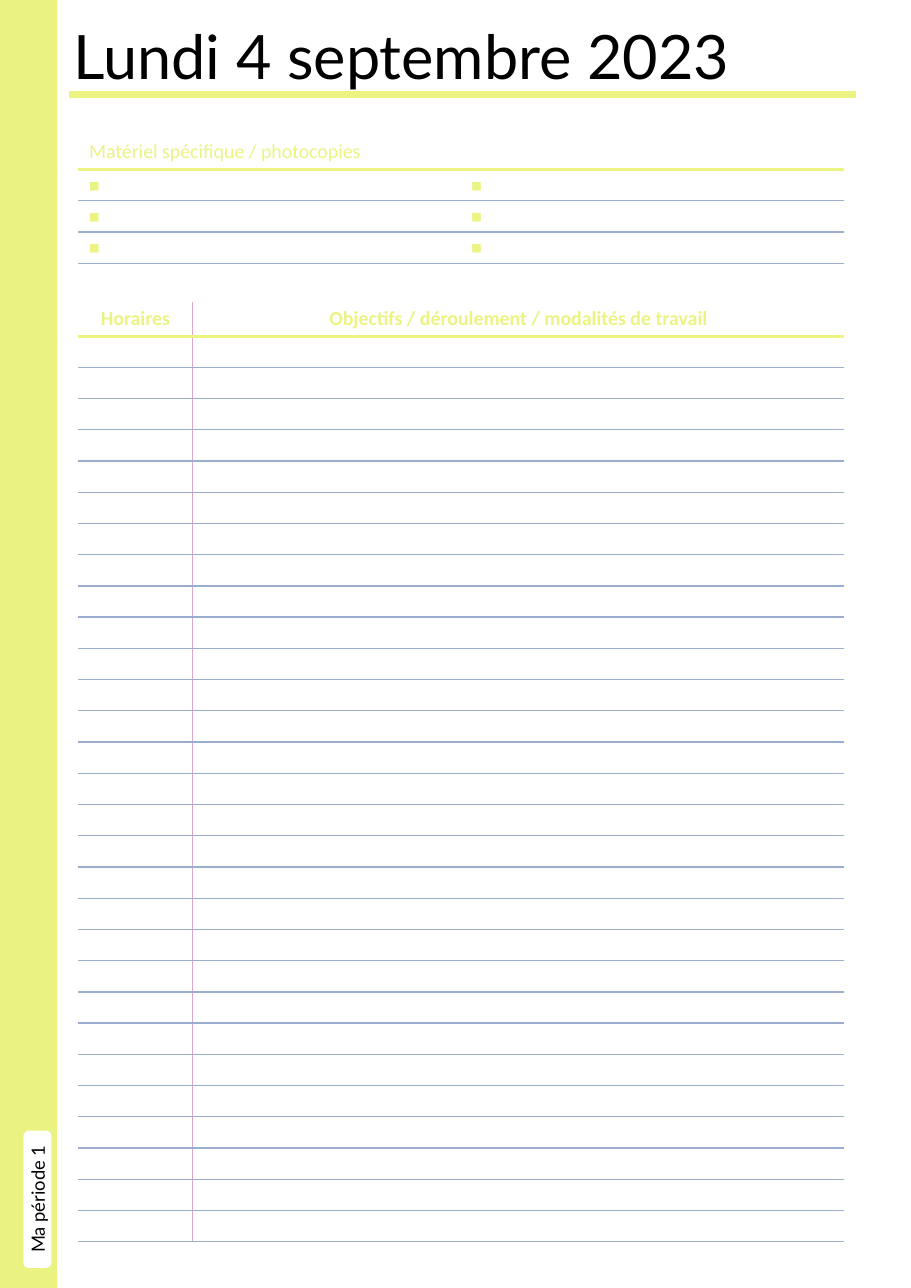
from lxml.etree import SubElement
from pptx import Presentation
from pptx.dml.color import RGBColor
from pptx.enum.shapes import MSO_CONNECTOR, MSO_SHAPE
from pptx.enum.text import MSO_ANCHOR, MSO_AUTO_SIZE, PP_ALIGN
from pptx.oxml.ns import qn
from pptx.util import Inches, Pt

COLORS = {
    "band": "EAF382",
    "accent": "EBF482",
    "rule": "9AADCD",
    "margin": "DCA9CC",
    "paper": "FFFFFF",
    "ink": "000000",
}
THICK, THIN = 2.25, 1
TITLE_ONLY = 5
SUPPLY_ROWS, SCHEDULE_ROWS = 3, 29
BULLET = "◼︎"


def color(name):
    return RGBColor.from_string(COLORS[name])


def write(para, text, size, font, color_name, bold=False, align=PP_ALIGN.LEFT):
    para.alignment = align
    span = para.add_run()
    span.text = text
    span.font.size = Pt(size)
    span.font.name = font
    span.font.bold = bold
    span.font.color.rgb = color(color_name)


def add_block(slide, preset, color_name, left, top, width, height):
    block = slide.shapes.add_shape(
        preset, Inches(left), Inches(top), Inches(width), Inches(height))
    block.shadow.inherit = False
    block.fill.solid()
    block.fill.fore_color.rgb = color(color_name)
    block.line.color.rgb = color(color_name)
    block.line.width = Pt(1)
    return block


def add_period_tab(slide, text):
    tab = add_block(slide, MSO_SHAPE.ROUNDED_RECTANGLE, "paper", 0.22, 10.27, 0.24, 1.23)
    frame = tab.text_frame
    frame.margin_left = frame.margin_right = 0
    frame.margin_top = frame.margin_bottom = 0
    frame.vertical_anchor = MSO_ANCHOR.MIDDLE
    tab._element.txBody.find(qn("a:bodyPr")).set("vert", "vert270")
    write(frame.paragraphs[0], text, 12, "Lato", "ink", align=PP_ALIGN.CENTER)


def add_title(slide, text):
    title = slide.shapes.title
    title.left, title.top = Inches(0.57), Inches(0.12)
    title.width, title.height = Inches(7.32), Inches(0.77)
    frame = title.text_frame
    frame.word_wrap = True
    frame.auto_size = MSO_AUTO_SIZE.SHAPE_TO_FIT_TEXT
    frame.vertical_anchor = MSO_ANCHOR.TOP
    write(frame.paragraphs[0], text, 40, "Lato", "ink")


def add_underline(slide):
    line = slide.shapes.add_connector(
        MSO_CONNECTOR.STRAIGHT, Inches(0.63), Inches(0.86), Inches(7.77), Inches(0.86))
    line.line.color.rgb = color("accent")
    line.line.width = Pt(4.75)
    SubElement(line._element.spPr, qn("a:effectLst"))


def set_borders(cell, **edges):
    """Draw the given edges (L, R, T, B) as (color, width) and clear the others."""
    properties = cell._tc.get_or_add_tcPr()
    for side in "LRTB":
        border = SubElement(properties, qn(f"a:ln{side}"))
        if side in edges:
            name, width = edges[side]
            border.set("w", str(Pt(width)))
            fill = SubElement(border, qn("a:solidFill"))
            SubElement(fill, qn("a:srgbClr"), val=COLORS[name])
        else:
            SubElement(border, qn("a:noFill"))


def add_ruled_table(slide, top, height, header, columns, rows, divided=False):
    """Add a header row and evenly ruled rows, with an optional column divider."""
    table = slide.shapes.add_table(
        rows + 1, len(columns), Inches(0.71), Inches(top),
        Inches(sum(columns)), Inches(height)).table
    table.first_row = table.horz_banding = False
    for column, width in zip(table.columns, columns):
        column.width = Inches(width)
    for index, row in enumerate(table.rows):
        row.height = Inches((height - header) / rows if index else header)
        for position, cell in enumerate(row.cells):
            edges = {"B": ("rule", THIN) if index else ("accent", THICK)}
            if index:
                edges["T"] = ("rule", THIN) if index > 1 else ("accent", THICK)
            if divided:
                edges["L" if position else "R"] = ("margin", THIN)
            set_borders(cell, **edges)
            cell.fill.solid()
            cell.fill.fore_color.rgb = color("paper")
            cell.margin_top = cell.margin_bottom = Inches(0.02)
            cell.vertical_anchor = MSO_ANCHOR.MIDDLE
    return table


def shrink_empty_cells(table):
    """Give empty cells a small text size so that they keep their row height."""
    for cell in table.iter_cells():
        if not cell.text:
            SubElement(cell.text_frame.paragraphs[0]._p, qn("a:endParaRPr"), sz="1100")


def add_supplies(slide):
    table = add_ruled_table(slide, 1.22, 1.17, 0.32, [3.47, 3.48], SUPPLY_ROWS)
    write(table.cell(0, 0).text_frame.paragraphs[0],
          "Matériel spécifique / photocopies", 13, "Calibri", "accent")
    for row in range(1, SUPPLY_ROWS + 1):
        for column in range(2):
            write(table.cell(row, column).text_frame.paragraphs[0],
                  BULLET, 11, "Calibri", "accent")
    shrink_empty_cells(table)


def add_schedule(slide):
    table = add_ruled_table(slide, 2.74, 8.54, 0.31, [1.04, 5.91], SCHEDULE_ROWS, divided=True)
    headings = ["Horaires", "Objectifs / déroulement / modalités de travail"]
    for column, heading in enumerate(headings):
        write(table.cell(0, column).text_frame.paragraphs[0], heading,
              13, "Calibri", "accent", bold=True, align=PP_ALIGN.CENTER)
    shrink_empty_cells(table)


def main():
    deck = Presentation()
    deck.slide_width, deck.slide_height = Inches(8.27), Inches(11.69)
    page = deck.slides.add_slide(deck.slide_layouts[TITLE_ONLY])
    add_block(page, MSO_SHAPE.RECTANGLE, "band", 0, 0, 0.51, 11.69)
    add_period_tab(page, "Ma période 1")
    add_underline(page)
    add_title(page, "Lundi 4 septembre 2023")
    add_supplies(page)
    add_schedule(page)
    deck.save("out.pptx")


if __name__ == "__main__":
    main()
